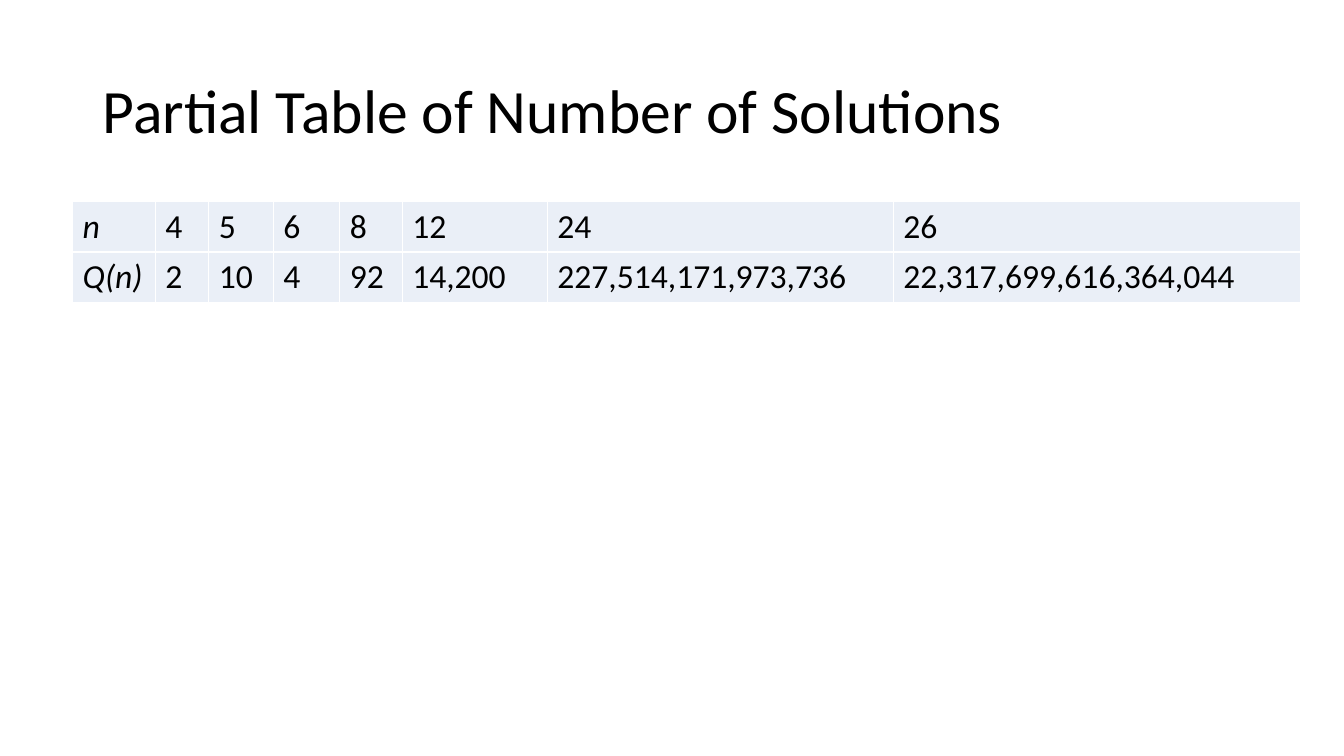
from dataclasses import dataclass

from lxml import etree
from pptx import Presentation
from pptx import util as u
from pptx.dml.color import RGBColor
from pptx.enum import text
from pptx.oxml import ns

BLACK = RGBColor(0x00, 0x00, 0x00)
WHITE = RGBColor(0xFF, 0xFF, 0xFF)
PALE = RGBColor(0xEA, 0xEF, 0xF7)
FONT = "Calibri"
LEFT, TOP, ROW = 0.72, 2, 0.5


@dataclass
class Column:
    width: float
    size: str
    count: str
    italic: bool = False


COLUMNS = [
    Column(0.82, "n", "Q(n)", italic=True),
    Column(0.53, "4", "2"),
    Column(0.64, "5", "10"),
    Column(0.66, "6", "4"),
    Column(0.62, "8", "92"),
    Column(1.44, "12", "14,200"),
    Column(3.43, "24", "227,514,171,973,736"),
    Column(4.04, "26", "22,317,699,616,364,044"),
]


def write(frame, words: str, *, size: float, italic: bool = False,
          spacing: float = 1.0) -> None:
    para = frame.paragraphs[0]
    para.line_spacing = spacing
    run = para.add_run()
    run.text = words
    font = run.font
    font.name, font.size, font.italic = FONT, u.Pt(size), italic
    font.color.rgb = BLACK


def edge(cell, color: RGBColor, width: float) -> None:
    """Draw a solid line on all four sides; call before filling the cell."""
    props = cell._tc.get_or_add_tcPr()
    for side in ("a:lnL", "a:lnR", "a:lnT", "a:lnB"):
        line = etree.SubElement(props, ns.qn(side), w=str(u.Pt(width)))
        fill = etree.SubElement(line, ns.qn("a:solidFill"))
        etree.SubElement(fill, ns.qn("a:srgbClr"), val=str(color))


def add_title(slide, words: str) -> None:
    box = slide.shapes.add_textbox(
        u.Inches(0.92), u.Inches(0.4), u.Inches(11.5), u.Inches(1.45))
    frame = box.text_frame
    frame.word_wrap = True
    frame.vertical_anchor = text.MSO_ANCHOR.MIDDLE
    write(frame, words, size=44, spacing=0.9)


def add_grid(slide, columns: list[Column]) -> None:
    width = sum(col.width for col in columns)
    table = slide.shapes.add_table(
        2, len(columns), u.Inches(LEFT), u.Inches(TOP),
        u.Inches(width), u.Inches(2 * ROW)).table
    table.first_row = table.horz_banding = False
    for x, col in enumerate(columns):
        table.columns[x].width = u.Inches(col.width)
        for y, words in enumerate((col.size, col.count)):
            cell = table.cell(y, x)
            edge(cell, WHITE, 1)
            cell.fill.solid()
            cell.fill.fore_color.rgb = PALE
            write(cell.text_frame, words, size=24, italic=col.italic)


def main() -> None:
    deck = Presentation()
    deck.slide_width, deck.slide_height = u.Inches(13.33), u.Inches(7.5)
    slide = deck.slides.add_slide(deck.slide_layouts[6])
    add_title(slide, "Partial Table of Number of Solutions")
    add_grid(slide, COLUMNS)
    deck.save("out.pptx")


if __name__ == "__main__":
    main()
